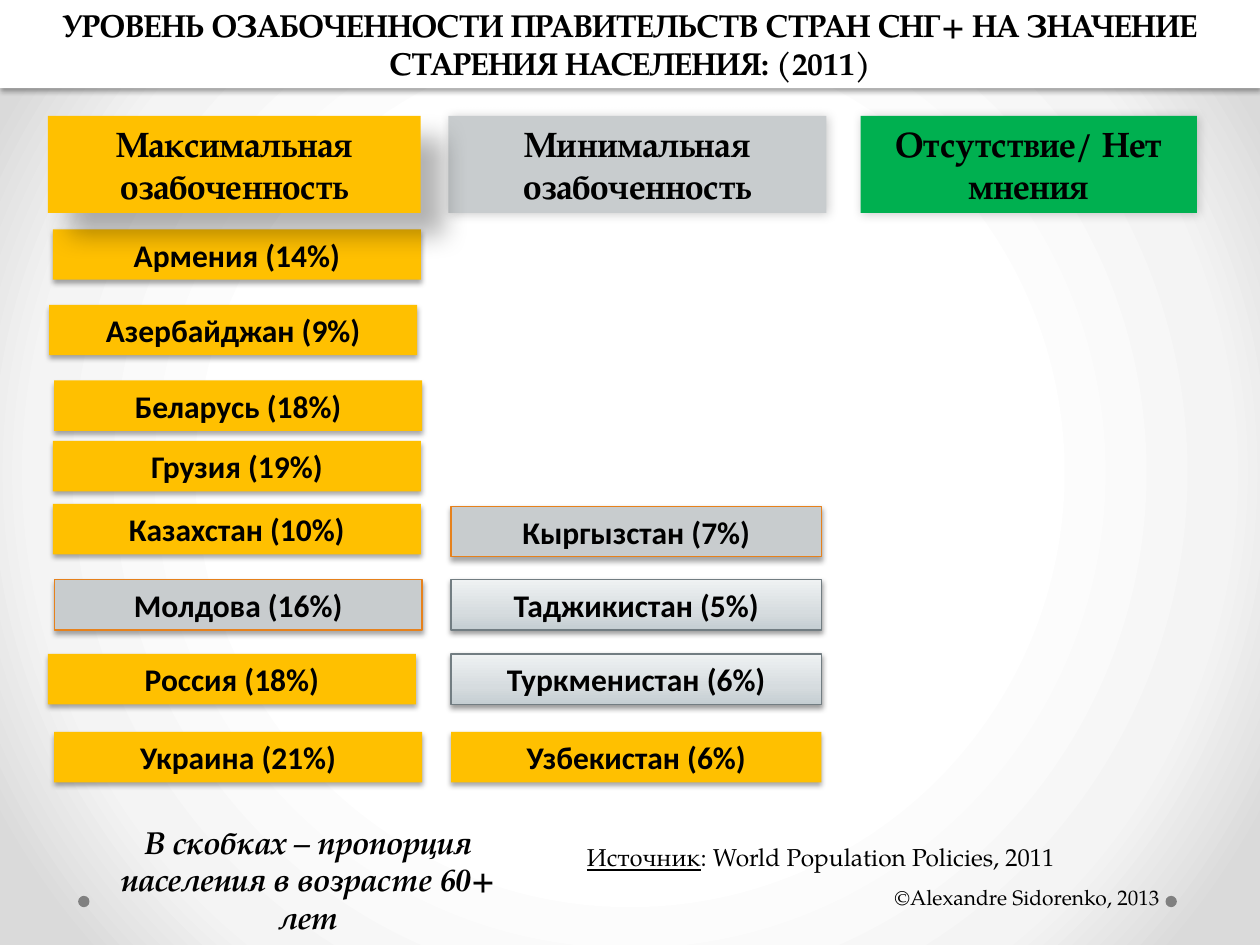
import pptx
import pptx.dml.color
import pptx.enum.shapes
import pptx.enum.text
import pptx.oxml
import pptx.oxml.ns
import pptx.util

Inches = pptx.util.Inches
SERIF = "TeX Gyre Pagella"
AMBER, GREY, GREEN, BLACK, WHITE = "FFC000", "C8CCCE", "00B050", "000000", "FFFFFF"
SILVER = [(0, "C5CED2"), (35, "D6DCDF"), (100, "EFF2F3")]
BACKDROP = [(50, "FFFFFF"), (76, "F4F4F4"), (92, "DADADA")]
UPWARD = '<a:lin ang="16200000" scaled="0"/>'
RADIAL = '<a:path path="circle"><a:fillToRect l="50000" t="50000" r="50000" b="50000"/></a:path>'
BAR_SHADOW = (35, 3.1, 1.8, 90)
SILVER_SHADOW = (38, 3.1, 1.6, 90)
LIGHT_SHADOW = (20, 6, 1, 45)
DEEP_SHADOW = (30, 15, 18, 45)

BAR_STYLES = {
    "amber": (AMBER, None, BAR_SHADOW),
    "grey": (GREY, "E6811C", BAR_SHADOW),
    "silver": (SILVER, "727D82", SILVER_SHADOW),
}
MAXIMUM_BARS = [
    ("Армения (14%)", 0.42, 1.82, "amber"),
    ("Азербайджан (9%)", 0.39, 2.42, "amber"),
    ("Беларусь (18%)", 0.43, 3.02, "amber"),
    ("Грузия (19%)", 0.42, 3.5, "amber"),
    ("Казахстан (10%)", 0.42, 4, "amber"),
    ("Молдова (16%)", 0.43, 4.6, "grey"),
    ("Россия (18%)", 0.38, 5.19, "amber"),
    ("Украина (21%)", 0.43, 5.81, "amber"),
]
MINIMUM_BARS = [
    ("Кыргызстан (7%)", 3.58, 4.02, "grey"),
    ("Таджикистан (5%)", 3.58, 4.6, "silver"),
    ("Туркменистан (6%)", 3.58, 5.19, "silver"),
    ("Узбекистан (6%)", 3.58, 5.81, "amber"),
]
HEADERS = [
    ("Отсутствие/ Нет мнения", 6.83, 2.67, GREEN, LIGHT_SHADOW),
    ("Минимальная озабоченность", 3.56, 3, GREY, LIGHT_SHADOW),
    ("Максимальная озабоченность", 0.38, 2.96, AMBER, DEEP_SHADOW),
]


def colour(value):
    return pptx.dml.color.RGBColor.from_string(value)


def apply(target, values):
    for name, value in values.items():
        setattr(target, name, value)


def place(shape, box):
    apply(shape, dict(zip(("left", "top", "width", "height"), map(Inches, box))))


def paint_gradient(owner, fill, stops, direction):
    fill.gradient()
    gradient = owner._element.find(".//" + pptx.oxml.ns.qn("a:gradFill"))
    marks = "".join(
        f'<a:gs pos="{position * 1000}"><a:srgbClr val="{value}"/></a:gs>'
        for position, value in stops
    )
    source = f'<a:gradFill {pptx.oxml.ns.nsdecls("a")}><a:gsLst>{marks}</a:gsLst>{direction}</a:gradFill>'
    gradient.getparent().replace(gradient, pptx.oxml.parse_xml(source))


def cast_shadow(shape, opacity, blur, distance, angle):
    shape.shadow.inherit = False
    effects = shape._element.spPr.find(pptx.oxml.ns.qn("a:effectLst"))
    effects.append(pptx.oxml.parse_xml(
        f'<a:outerShdw {pptx.oxml.ns.nsdecls("a")} blurRad="{pptx.util.Pt(blur)}" '
        f'dist="{pptx.util.Pt(distance)}" dir="{angle * 60000}" rotWithShape="0">'
        f'<a:srgbClr val="{BLACK}"><a:alpha val="{opacity * 1000}"/></a:srgbClr></a:outerShdw>'
    ))


def decorate(shape, fill, line=None, shadow=None):
    if isinstance(fill, list):
        paint_gradient(shape, shape.fill, fill, UPWARD)
    else:
        shape.fill.solid()
        shape.fill.fore_color.rgb = colour(fill)
    if line:
        shape.line.color.rgb = colour(line)
        shape.line.width = pptx.util.Pt(0.75)
    else:
        shape.line.fill.background()
    shape.shadow.inherit = False
    if shadow:
        cast_shadow(shape, *shadow)


def write(shape, spans, size, font=SERIF, centred=True, anchor="MIDDLE"):
    frame = shape.text_frame
    apply(frame, {
        "word_wrap": True,
        "auto_size": pptx.enum.text.MSO_AUTO_SIZE.NONE,
        "vertical_anchor": pptx.enum.text.MSO_ANCHOR[anchor],
    })
    para = frame.paragraphs[0]
    para.alignment = pptx.enum.text.PP_ALIGN.CENTER if centred else pptx.enum.text.PP_ALIGN.LEFT
    for text, style in spans:
        span = para.add_run()
        span.text = text
        apply(span.font, {"name": font, "size": pptx.util.Pt(size), **style})
        span.font.color.rgb = colour(BLACK)


def add_block(page, box, fill, line=None, shadow=None, kind="RECTANGLE"):
    shape = page.shapes.add_shape(
        pptx.enum.shapes.MSO_SHAPE[kind], *map(Inches, box))
    decorate(shape, fill, line, shadow)
    return shape


def add_backdrop(page):
    paint_gradient(page, page.background.fill, BACKDROP, RADIAL)
    for left in (0.62, 9.25):
        add_block(page, (left, 7.11, 0.09, 0.09), "808080", kind="OVAL")


def add_title(page, box):
    title = page.shapes.title
    place(title, box)
    decorate(title, WHITE, shadow=BAR_SHADOW)
    text = "УРОВЕНЬ ОЗАБОЧЕННОСТИ ПРАВИТЕЛЬСТВ СТРАН СНГ+ НА ЗНАЧЕНИЕ СТАРЕНИЯ НАСЕЛЕНИЯ: (2011)"
    write(title, [(text, {"bold": True})], 18)


def add_bars(page, bars, width):
    for text, left, top, style in bars:
        bar = add_block(page, (left, top, width, 0.4), *BAR_STYLES[style])
        write(bar, [(text, {"bold": True})], 18, font="Calibri")


def add_headers(page, top, height):
    for text, left, width, fill, shadow in HEADERS:
        header = add_block(page, (left, top, width, height), fill, shadow=shadow)
        write(header, [(text, {"bold": True})], 20)


def add_note(page, box, spans, size, centred=False):
    note = page.shapes.add_textbox(*map(Inches, box))
    write(note, spans, size, centred=centred, anchor="TOP")


def add_notes(page):
    add_note(page, (0.82, 6.48, 3.25, 1.01),
             [("В скобках – пропорция населения в возрасте 60+ лет", {"bold": True, "italic": True})],
             18, centred=True)
    add_note(page, (4.56, 6.63, 3.94, 0.34),
             [("Источник", {"underline": True}), (": World Рopulation Policies, 2011", {})], 14)
    add_note(page, (7, 6.97, 2.32, 0.3), [("©Alexandre Sidorenko, 2013", {})], 12)


def main():
    deck = pptx.Presentation()
    apply(deck, {"slide_width": Inches(10), "slide_height": Inches(7.5)})
    page = deck.slides.add_slide(deck.slide_layouts.get_by_name("Title Only"))
    add_backdrop(page)
    add_title(page, (0, 0, 10, 0.7))
    add_bars(page, MAXIMUM_BARS, 2.92)
    add_bars(page, MINIMUM_BARS, 2.94)
    add_headers(page, 0.92, 0.77)
    add_notes(page)
    deck.save("out.pptx")


if __name__ == "__main__":
    main()
